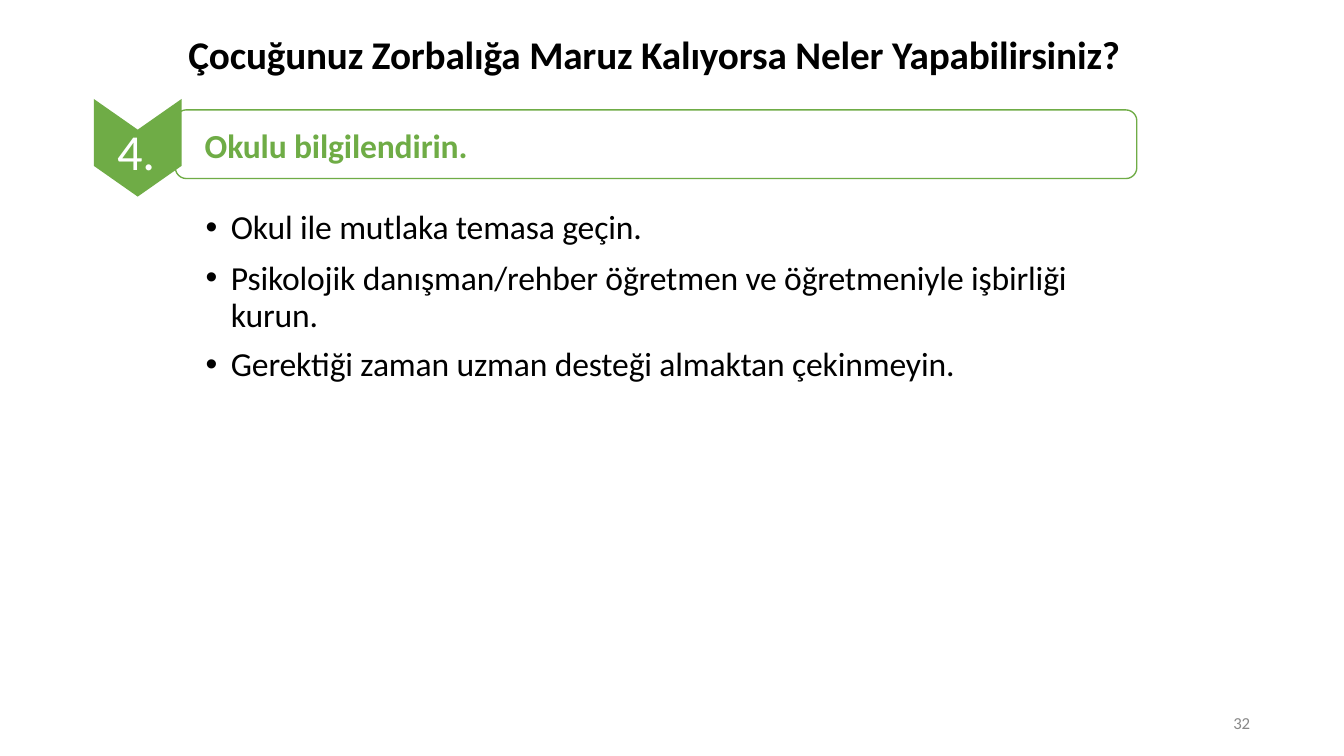
from dataclasses import dataclass

import pptx
import pptx.dml.color
import pptx.enum.shapes
import pptx.enum.text
import pptx.oxml
import pptx.oxml.ns
import pptx.util
from pptx.dml.color import RGBColor
from pptx.util import Cm

GREEN = RGBColor(0x6F, 0xAC, 0x46)
BLACK = RGBColor(0x00, 0x00, 0x00)
WHITE = RGBColor(0xFF, 0xFF, 0xFF)
GRAY = RGBColor(0x88, 0x88, 0x88)
FONT = "Calibri"


@dataclass(frozen=True)
class Box:
    left: float
    top: float
    width: float
    height: float

    def lengths(self) -> tuple:
        return Cm(self.left), Cm(self.top), Cm(self.width), Cm(self.height)


@dataclass(frozen=True)
class Label:
    text: str
    box: Box
    size: float
    color: RGBColor
    bold: bool = False


@dataclass(frozen=True)
class Advice:
    text: str
    space_before: float = 0
    line_spacing: float | None = None


LABELS = [
    Label("Okulu bilgilendirin.", Box(5.16, 3.14, 6.8, 1.09), 24, GREEN, bold=True),
    Label("4.", Box(2.95, 3.03, 1.05, 1.6), 36, WHITE),
    Label("Çocuğunuz Zorbalığa Maruz Kalıyorsa Neler Yapabilirsiniz?",
          Box(4.75, 0.77, 23.8, 1.24), 28, BLACK, bold=True),
    Label("32", Box(31.08, 17.96, 0.6, 0.51), 12, GRAY),
]

ADVICE_BOX = Box(5.16, 4.9, 22, 4.8)
ADVICE = [
    Advice("Okul ile mutlaka temasa geçin."),
    Advice("Psikolojik danışman/rehber öğretmen ve öğretmeniyle işbirliği kurun.",
           space_before=10.4, line_spacing=25.9),
    Advice("Gerektiği zaman uzman desteği almaktan çekinmeyin.", space_before=6.8),
]


def add_frame(slide, box: Box, top_inset: float = 0):
    frame = slide.shapes.add_textbox(*box.lengths()).text_frame
    frame.word_wrap = True
    frame.margin_left = frame.margin_right = frame.margin_bottom = 0
    frame.margin_top = Cm(top_inset)
    return frame


def write_text(paragraph, text: str, *, size: float, color: RGBColor,
               bold: bool = False, spacing: float = -0.1) -> None:
    run = paragraph.add_run()
    run.text = text
    run.font.name = FONT
    run.font.size = pptx.util.Pt(size)
    run.font.bold = bold
    run.font.color.rgb = color
    run.font._element.set("spc", str(round(spacing * 100)))


def add_bullet(paragraph) -> None:
    properties = paragraph._p.get_or_add_pPr()
    properties.set("marL", str(Cm(0.66)))
    properties.set("indent", str(-Cm(0.64)))
    namespace = pptx.oxml.ns.nsdecls("a")
    for xml in (f'<a:buFont {namespace} typeface="Arial"/>',
                f'<a:buChar {namespace} char="•"/>'):
        properties.append(pptx.oxml.parse_xml(xml))


def add_plain_shape(slide, kind, box: Box, adjustment: float):
    shape = slide.shapes.add_shape(kind, *box.lengths())
    shape.adjustments[0] = adjustment
    shape.shadow.inherit = False
    return shape


def add_heading_shapes(slide) -> None:
    kinds = pptx.enum.shapes.MSO_SHAPE
    banner = add_plain_shape(slide, kinds.ROUNDED_RECTANGLE,
                             Box(4.42, 2.77, 24.23, 1.73), 0.16)
    banner.fill.background()
    banner.line.color.rgb = GREEN
    banner.line.width = pptx.util.Pt(0.96)

    # The chevron is turned to point down
    chevron = add_plain_shape(slide, kinds.CHEVRON, Box(2.24, 2.62, 2.46, 2.21), 0.35)
    chevron.rotation = 90
    chevron.fill.solid()
    chevron.fill.fore_color.rgb = GREEN
    chevron.line.fill.background()


def add_advice(slide) -> None:
    frame = add_frame(slide, ADVICE_BOX, top_inset=0.3)
    for index, advice in enumerate(ADVICE):
        paragraph = frame.add_paragraph() if index else frame.paragraphs[0]
        add_bullet(paragraph)
        if advice.space_before:
            paragraph.space_before = pptx.util.Pt(advice.space_before)
        if advice.line_spacing:
            paragraph.line_spacing = pptx.util.Pt(advice.line_spacing)
        write_text(paragraph, advice.text, size=24, color=BLACK)


def main() -> None:
    presentation = pptx.Presentation()
    presentation.slide_width = Cm(33.87)
    presentation.slide_height = Cm(19.05)
    slide = presentation.slides.add_slide(presentation.slide_layouts[6])

    # Numbered heading
    add_heading_shapes(slide)

    # Bulleted advice
    add_advice(slide)

    # Title, heading text and slide number
    for label in LABELS:
        frame = add_frame(slide, label.box)
        write_text(frame.paragraphs[0], label.text, size=label.size,
                   color=label.color, bold=label.bold)

    presentation.save("out.pptx")


if __name__ == "__main__":
    main()
